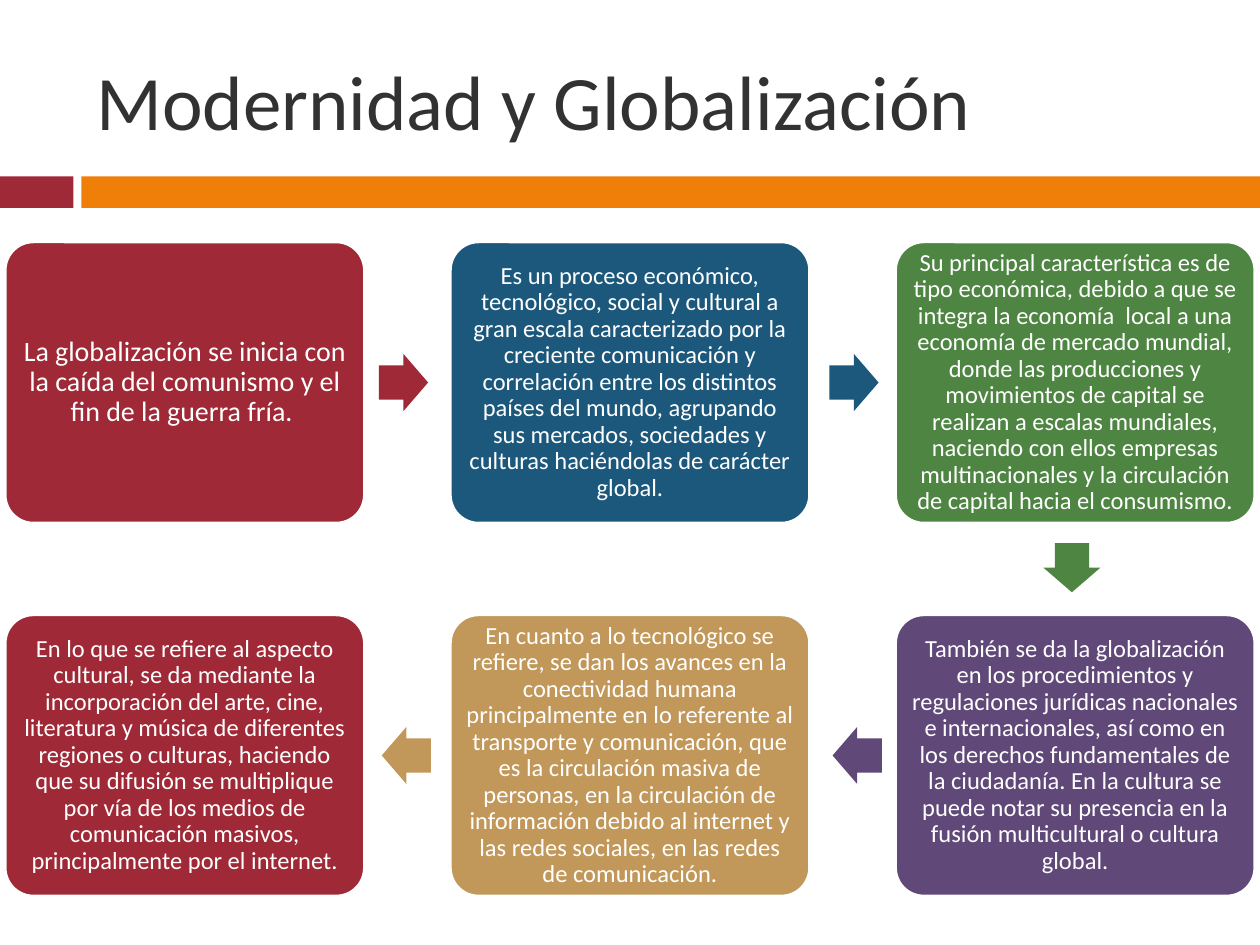
"""Build the slide on modernity and globalization: six cards in a flow joined by arrows."""
from pptx import Presentation
from pptx.dml.color import RGBColor
from pptx.enum.shapes import MSO_SHAPE as Shape
from pptx.enum.text import MSO_ANCHOR as Anchor, MSO_AUTO_SIZE as AutoSize, PP_ALIGN as Align
from pptx.util import Pt

COLORS = {
    "red": "9F2936", "orange": "F07F09", "blue": "1B587C", "green": "4E8542",
    "purple": "604878", "tan": "C19859", "white": "FFFFFF", "title": "323232",
}
CARD_WIDTH, CARD_HEIGHT = 205.2, 160.6
CARD_LEFT, CARD_TOP = 3, 138.3
COLUMN_STEP, ROW_STEP = 254.4, 213.1
ARROW_WIDTH, ARROW_HEIGHT = 28.1, 32.6


def write_text(shape, text, size, color, align, inset=None, line_spacing=1.0):
    frame = shape.text_frame
    frame.word_wrap = True
    frame.auto_size = AutoSize.NONE
    frame.vertical_anchor = Anchor.MIDDLE
    if inset is not None:
        frame.margin_left = frame.margin_right = Pt(inset)
        frame.margin_top = frame.margin_bottom = Pt(inset)
    paragraph = frame.paragraphs[0]
    paragraph.alignment = align
    paragraph.line_spacing = line_spacing
    run = paragraph.add_run()
    run.text = text
    run.font.name = "Calibri"
    run.font.size = Pt(size)
    run.font.color.rgb = RGBColor.from_string(COLORS[color])


def add_filled(kind, left, top, width, height, color):
    shape = slide.shapes.add_shape(kind, Pt(left), Pt(top), Pt(width), Pt(height))
    shape.shadow.inherit = False
    shape.fill.solid()
    shape.fill.fore_color.rgb = RGBColor.from_string(COLORS[color])
    shape.line.fill.background()
    return shape


presentation = Presentation()
presentation.slide_width, presentation.slide_height = Pt(720), Pt(540)
slide = presentation.slides.add_slide(presentation.slide_layouts[5])

title = slide.shapes.title
title.left, title.top, title.width, title.height = Pt(48), Pt(18), Pt(642), Pt(78)
write_text(title, "Modernidad y Globalización", size=44, color="title", align=Align.LEFT)

for left, width, color in [(0, 42, "red"), (46.5, 673.5, "orange")]:
    add_filled(Shape.RECTANGLE, left, 100.8, width, 18, color)

cards = [
    (0, 0, "red", 16, 5,
     "La globalización se inicia con la caída del comunismo y el fin de la guerra fría. "),
    (1, 0, "blue", 14, 4.8,
     "Es un proceso económico, tecnológico, social y cultural a gran escala caracterizado por la "
     "creciente comunicación y correlación entre los distintos países del mundo, agrupando sus "
     "mercados, sociedades y culturas haciéndolas de carácter global."),
    (2, 0, "green", 14, 4.2,
     "Su principal característica es de tipo económica, debido a que se integra la economía  local "
     "a una economía de mercado mundial, donde las producciones y movimientos de capital se "
     "realizan a escalas mundiales, naciendo con ellos empresas multinacionales y la circulación "
     "de capital hacia el consumismo."),
    (2, 1, "purple", 14, 4.2,
     "También se da la globalización en los procedimientos y regulaciones jurídicas nacionales e "
     "internacionales, así como en los derechos fundamentales de la ciudadanía. En la cultura se "
     "puede notar su presencia en la fusión multicultural o cultura global."),
    (1, 1, "tan", 14, 4.2,
     "En cuanto a lo tecnológico se refiere, se dan los avances en la conectividad humana "
     "principalmente en lo referente al transporte y comunicación, que es la circulación masiva "
     "de personas, en la circulación de información debido al internet y las redes sociales, en "
     "las redes de comunicación."),
    (0, 1, "red", 14, 4.2,
     "En lo que se refiere al aspecto cultural, se da mediante la incorporación del arte, cine, "
     "literatura y música de diferentes regiones o culturas, haciendo que su difusión se "
     "multiplique por vía de los medios de comunicación masivos, principalmente por el internet."),
]
for column, row, color, size, inset, text in cards:
    left, top = CARD_LEFT + column * COLUMN_STEP, CARD_TOP + row * ROW_STEP
    card = add_filled(Shape.ROUNDED_RECTANGLE, left, top, CARD_WIDTH, CARD_HEIGHT, color)
    card.adjustments[0] = 0.1
    card.line.color.rgb = RGBColor.from_string(COLORS["white"])
    card.line.width = Pt(1.5)
    write_text(card, text, size=size, color="white", align=Align.CENTER,
               inset=inset, line_spacing=0.9)

upper_middle = CARD_TOP + CARD_HEIGHT / 2
lower_middle = upper_middle + ROW_STEP
arrows = [
    (230.6, upper_middle, 0, "red"),
    (488, upper_middle, 0, "blue"),
    (612.5, 324.4, 90, "green"),
    (489.8, lower_middle, 180, "purple"),
    (232.2, lower_middle, 180, "tan"),
]
for center_x, center_y, rotation, color in arrows:
    arrow = add_filled(Shape.RIGHT_ARROW, center_x - ARROW_WIDTH / 2, center_y - ARROW_HEIGHT / 2,
                       ARROW_WIDTH, ARROW_HEIGHT, color)
    arrow.adjustments[0] = 0.6
    arrow.adjustments[1] = 0.5
    arrow.rotation = rotation

presentation.save("out.pptx")
